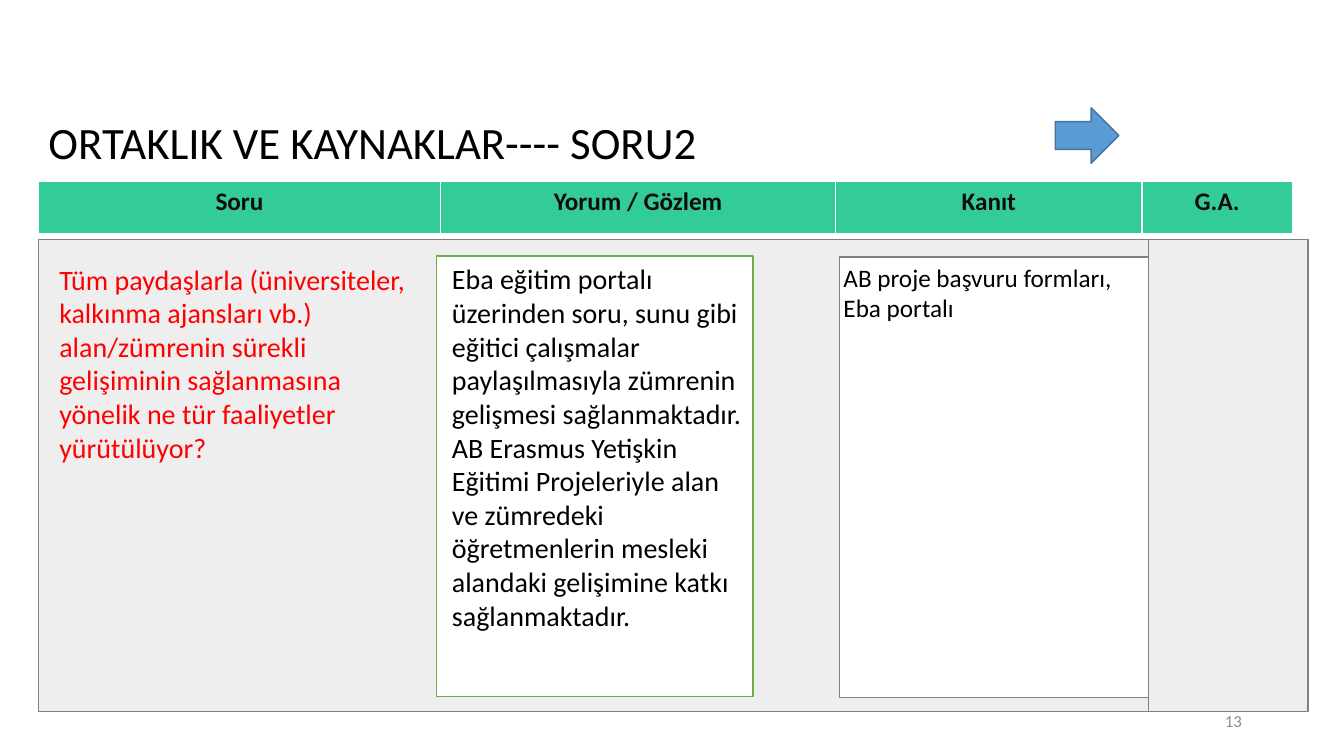
from lxml.etree import SubElement
from pptx import Presentation
from pptx.dml.color import RGBColor
from pptx.enum.shapes import MSO_SHAPE
from pptx.enum.text import MSO_ANCHOR, MSO_AUTO_SIZE, PP_ALIGN
from pptx.oxml.ns import qn
from pptx.util import Pt

WHITE = RGBColor(255, 255, 255)
BLACK = RGBColor(0, 0, 0)
INK = RGBColor(0x0D, 0x0D, 0x0D)
RED = RGBColor(255, 0, 0)
PALE = RGBColor(0xEE, 0xEE, 0xEE)
GREY = RGBColor(0x80, 0x80, 0x80)
DIM = RGBColor(0x8C, 0x8C, 0x8C)
GREEN = RGBColor(0x70, 0xAD, 0x47)
MINT = RGBColor(0x33, 0xCC, 0x99)
BLUE = RGBColor(0x5B, 0x9B, 0xD5)
NAVY = RGBColor(0x43, 0x73, 0x9E)


class Page:
    """Holds the slide and its style, and draws each kind of element."""

    font = "Calibri"

    def __init__(self, deck):
        self.slide = deck.slides.add_slide(deck.slide_layouts[5])
        self.shapes = self.slide.shapes

    def fill_text(self, frame, text, size, color, align=PP_ALIGN.LEFT, bold=False):
        frame.text = text
        for para in frame.paragraphs:
            para.alignment = align
            for run in para.runs:
                run.font.name = self.font
                run.font.size = Pt(size)
                run.font.bold = bold
                run.font.color.rgb = color

    def title(self, box, text):
        head = self.shapes.title
        head.left, head.top, head.width, head.height = map(Pt, box)
        frame = head.text_frame
        self.fill_text(frame, text, 32, BLACK)
        frame.word_wrap = True
        frame.auto_size = MSO_AUTO_SIZE.NONE
        frame.vertical_anchor = MSO_ANCHOR.MIDDLE
        frame.paragraphs[0].line_spacing = 0.9

    def shape(self, box, fill, line=None, width=0.75, kind=MSO_SHAPE.RECTANGLE):
        item = self.shapes.add_shape(kind, *map(Pt, box))
        item.shadow.inherit = False
        item.fill.solid()
        item.fill.fore_color.rgb = fill
        if line is None:
            item.line.fill.background()
        else:
            item.line.color.rgb = line
            item.line.width = Pt(width)
        return item

    def label(self, box, text, size, color, align=PP_ALIGN.LEFT,
              anchor=MSO_ANCHOR.TOP, fill=None):
        if fill is None:
            item = self.shapes.add_textbox(*map(Pt, box))
        else:
            item = self.shape(box, fill)
        frame = item.text_frame
        frame.word_wrap = True
        frame.vertical_anchor = anchor
        self.fill_text(frame, text, size, color, align)

    def table(self, box, names, widths):
        grid = self.shapes.add_table(1, len(names), *map(Pt, box)).table
        for col, width in zip(grid.columns, widths):
            col.width = Pt(width)
        for cell, name in zip(grid.rows[0].cells, names):
            self.fill_text(cell.text_frame, name, 18, INK, PP_ALIGN.CENTER, True)
            self.edge(cell)
            cell.fill.solid()
            cell.fill.fore_color.rgb = MINT

    def edge(self, cell):
        props = cell._tc.get_or_add_tcPr()
        for side, width in zip("LRTB", (1, 1, 1, 3)):
            line = SubElement(props, qn(f"a:ln{side}"), w=str(Pt(width)))
            fill = SubElement(line, qn("a:solidFill"))
            SubElement(fill, qn("a:srgbClr"), val=str(WHITE))


def main():
    deck = Presentation()
    deck.slide_width, deck.slide_height = Pt(960), Pt(540)
    page = Page(deck)
    page.shape((27.4, 171.4, 907.2, 337), PALE, GREY)
    page.shape((311.8, 182.9, 226.1, 314.6), WHITE, GREEN, 1)
    page.title((27.4, 82.8, 715, 41), "ORTAKLIK VE KAYNAKLAR---- SORU2")
    page.label((678.2, 500.4, 216, 28.8), "13", 12, DIM,
               PP_ALIGN.RIGHT, MSO_ANCHOR.MIDDLE)
    page.table((27.4, 129.6, 895.7, 38.2),
               ("Soru", "Yorum / Gözlem", "Kanıt", "G.A."),
               (287.3, 282.2, 218.9, 107.3))
    page.label((35.3, 183.6, 262.1, 152.6),
               "Tüm paydaşlarla (üniversiteler, kalkınma ajansları vb.) "
               "alan/zümrenin sürekli gelişiminin sağlanmasına yönelik "
               "ne tür faaliyetler yürütülüyor?", 20, RED, fill=PALE)
    page.label((315.7, 183.6, 221.8, 273.6),
               "Eba eğitim portalı üzerinden soru, sunu gibi eğitici "
               "çalışmalar paylaşılmasıyla zümrenin gelişmesi sağlanmaktadır.\n"
               "AB Erasmus Yetişkin Eğitimi Projeleriyle alan ve zümredeki "
               "öğretmenlerin mesleki alandaki gelişimine katkı "
               "sağlanmaktadır.", 20, BLACK)
    page.shape((599.5, 183.6, 221, 314.6), WHITE, GREY)
    page.label((595.4, 183.6, 229, 51.1),
               "AB proje başvuru formları,\nEba portalı", 18, BLACK)
    page.shape((820.1, 171.4, 114.2, 337), PALE, GREY)
    page.shape((753.8, 77, 45.4, 39.6), BLUE, NAVY, 1, MSO_SHAPE.RIGHT_ARROW)
    deck.save("out.pptx")


if __name__ == "__main__":
    main()
